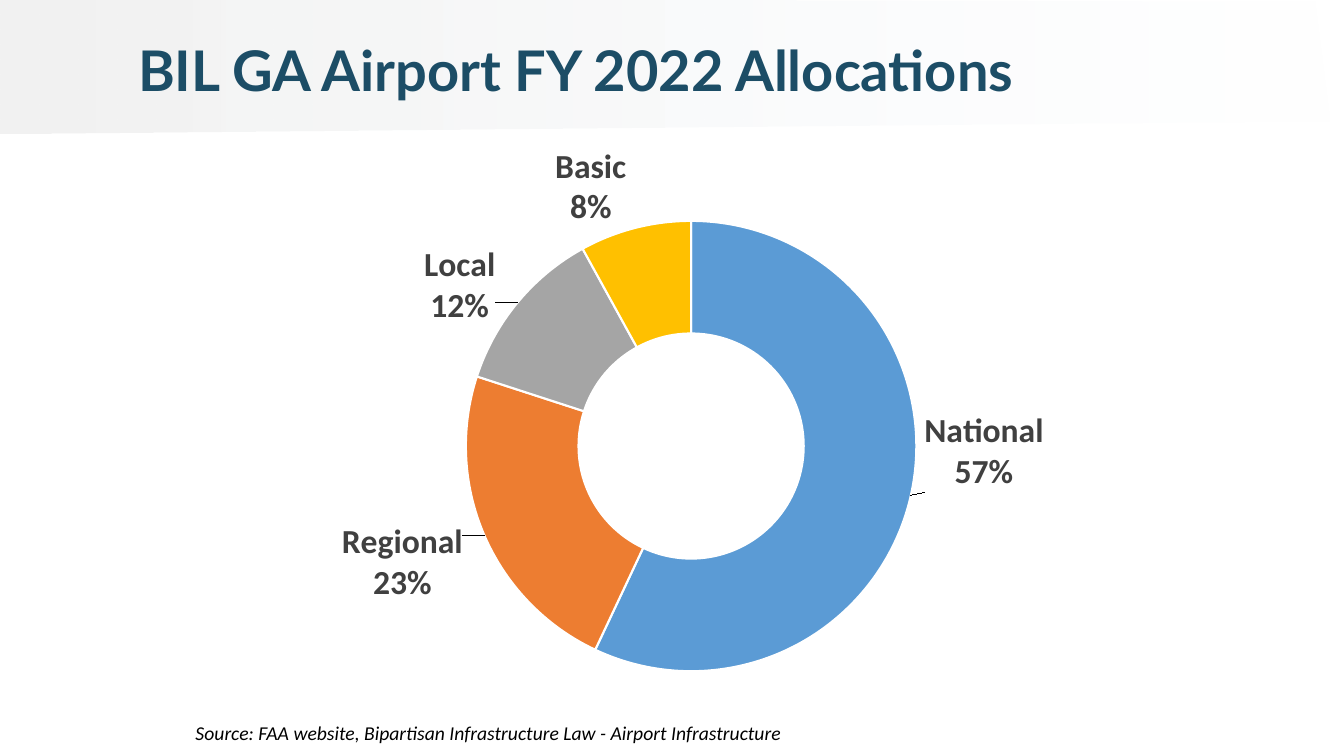
import math
from dataclasses import dataclass

import lxml.etree
import pptx
import pptx.chart.data
import pptx.dml.color
import pptx.enum.chart
import pptx.enum.text
import pptx.oxml
import pptx.oxml.ns
import pptx.util


@dataclass(frozen=True)
class Theme:
    """Colours, fonts and type sizes of the slide."""
    heading: str = "1C4D66"
    ink: str = "000000"
    label: str = "404040"
    paper: str = "FFFFFF"
    band_dark: str = "F2F2F2"
    band_light: str = "F7FAFD"
    slices: tuple = ("5B9BD5", "ED7D31", "A5A5A5", "FFC000")
    heading_font: str = "Lato"
    body_font: str = "Calibri"
    heading_size: int = 40
    label_size: int = 24
    source_size: int = 14


def colour(code):
    """Turn a hex code into a colour."""
    return pptx.dml.color.RGBColor.from_string(code)


class AllocationSlide:
    """Places elements on a grid of 133.3 columns by 75 rows."""

    columns, rows = 133.3, 75
    cell = pptx.util.Inches(0.1)

    def __init__(self, deck, theme):
        """Add a title-only page to the deck."""
        self.theme = theme
        deck.slide_width = self.length(self.columns)
        deck.slide_height = self.length(self.rows)
        self.page = deck.slides.add_slide(deck.slide_layouts[5])

    def length(self, cells):
        """Convert grid cells to a length."""
        return pptx.util.Emu(round(cells * self.cell))

    def style(self, font, name, size, code, bold=False, italic=False):
        """Apply type settings to a font."""
        font.name, font.size = name, pptx.util.Pt(size)
        font.bold, font.italic = bold, italic
        font.color.rgb = colour(code)

    def band(self, corners):
        """Draw the fading header band behind everything else."""
        points = [tuple(map(self.length, corner)) for corner in corners]
        builder = self.page.shapes.build_freeform(*points[0], scale=1.0)
        builder.add_line_segments(points[1:], close=True)
        shape = builder.convert_to_shape()
        shape.shadow.inherit = False
        shape.line.fill.background()
        shape.fill.gradient()
        shape.fill.gradient_angle = 0
        dark, light = shape.fill.gradient_stops
        dark.color.rgb = colour(self.theme.band_dark)
        light.color.rgb = colour(self.theme.band_light)
        dark.position, light.position = 0, 1
        faded = shape._element.xpath(".//a:gs/a:srgbClr")[-1]
        lxml.etree.SubElement(faded, pptx.oxml.ns.qn("a:alpha"), val="4000")
        self.page.shapes._spTree.insert(2, shape._element)

    def title(self, words, area):
        """Place and fill the title."""
        box = self.page.shapes.title
        box.left, box.top, box.width, box.height = map(self.length, area)
        box.text_frame.vertical_anchor = pptx.enum.text.MSO_ANCHOR.MIDDLE
        box.text_frame.auto_size = pptx.enum.text.MSO_AUTO_SIZE.NONE
        para = box.text_frame.paragraphs[0]
        para.alignment = pptx.enum.text.PP_ALIGN.LEFT
        para.line_spacing = 0.9
        span = para.add_run()
        span.text = words
        self.style(span.font, self.theme.heading_font, self.theme.heading_size,
                   self.theme.heading, bold=True)

    def source(self, words, area):
        """Write the source line."""
        box = self.page.shapes.add_textbox(*map(self.length, area))
        box.text_frame.word_wrap = False
        span = box.text_frame.paragraphs[0].add_run()
        span.text = words
        self.style(span.font, self.theme.body_font, self.theme.source_size,
                   self.theme.ink, italic=True)

    def layout(self, **settings):
        """Build a manual chart layout."""
        items = "".join(f'<c:{key} val="{value}"/>' for key, value in settings.items())
        return pptx.oxml.parse_xml(
            f'<c:layout {pptx.oxml.ns.nsdecls("c")}>'
            f"<c:manualLayout>{items}</c:manualLayout></c:layout>")

    def doughnut(self, shares, label_centres, area, plot):
        """Draw the doughnut with its labels at the given grid centres."""
        data = pptx.chart.data.CategoryChartData()
        data.categories = shares.keys()
        data.add_series("Series 1", shares.values())
        chart = self.page.shapes.add_chart(
            pptx.enum.chart.XL_CHART_TYPE.DOUGHNUT, *map(self.length, area), data).chart
        chart.has_title = chart.has_legend = False
        self.style(chart.font, self.theme.body_font, 10, self.theme.ink)
        plot_area = chart._chartSpace.xpath(".//c:plotArea")[0]
        for old in plot_area.xpath("./c:layout"):
            plot_area.remove(old)
        x, y, width, height = plot
        plot_area.insert(0, self.layout(
            layoutTarget="inner", xMode="edge", yMode="edge", x=x, y=y, w=width, h=height))
        series = chart.plots[0].series[0]
        labels = series.data_labels
        labels.show_value = False
        labels.show_percentage = labels.show_category_name = True
        labels.number_format, labels.number_format_is_linked = "0%", False

        left, top, chart_width, chart_height = area
        centre_x = left + chart_width * (x + width / 2)
        centre_y = top + chart_height * (y + height / 2)
        ring = 0.75 * min(chart_width * width, chart_height * height) / 2
        total, passed = sum(shares.values()), 0
        for index, (name, share) in enumerate(shares.items()):
            point = series.points[index]
            point.format.fill.solid()
            point.format.fill.fore_color.rgb = colour(self.theme.slices[index])
            point.format.line.color.rgb = colour(self.theme.paper)
            point.format.line.width = pptx.util.Pt(1.5)
            self.style(point.data_label.font, self.theme.body_font,
                       self.theme.label_size, self.theme.label, bold=True)
            angle = 2 * math.pi * (passed + share / 2) / total
            passed += share
            label_x, label_y = label_centres[name]
            shift_x = (label_x - centre_x - ring * math.sin(angle)) / chart_width
            shift_y = (label_y - centre_y + ring * math.cos(angle)) / chart_height
            label = chart._chartSpace.xpath(".//c:dLbl")[index]
            label.insert(1, self.layout(x=round(shift_x, 4), y=round(shift_y, 4)))
            for flag, value in (("showVal", "0"), ("showCatName", "1"), ("showPercent", "1")):
                label.find(pptx.oxml.ns.qn(f"c:{flag}")).set("val", value)
            separator = lxml.etree.SubElement(label, pptx.oxml.ns.qn("c:separator"))
            separator.text = "\n"


def main():
    """Build and save the deck."""
    deck = pptx.Presentation()
    slide = AllocationSlide(deck, Theme())
    slide.band([(0, 0), (61.8, 0), (130.4, 0.2), (131.9, 11.9), (0, 13.2)])
    slide.title("BIL GA Airport FY 2022 Allocations", (12.7, 4, 111.7, 6.5))
    slide.doughnut(
        {"National": 57, "Regional": 23, "Local": 12, "Basic": 8},
        {"National": (97.6, 44.8), "Regional": (39.9, 55.9),
         "Local": (45.6, 28.4), "Basic": (58.6, 18.6)},
        area=(12.7, 14, 111.7, 57.8), plot=(0.3, 0.135, 0.4, 0.777))
    slide.source("Source: FAA website, Bipartisan Infrastructure Law - Airport Infrastructure",
                 (18.4, 71, 61.2, 3.4))
    deck.save("out.pptx")


if __name__ == "__main__":
    main()
